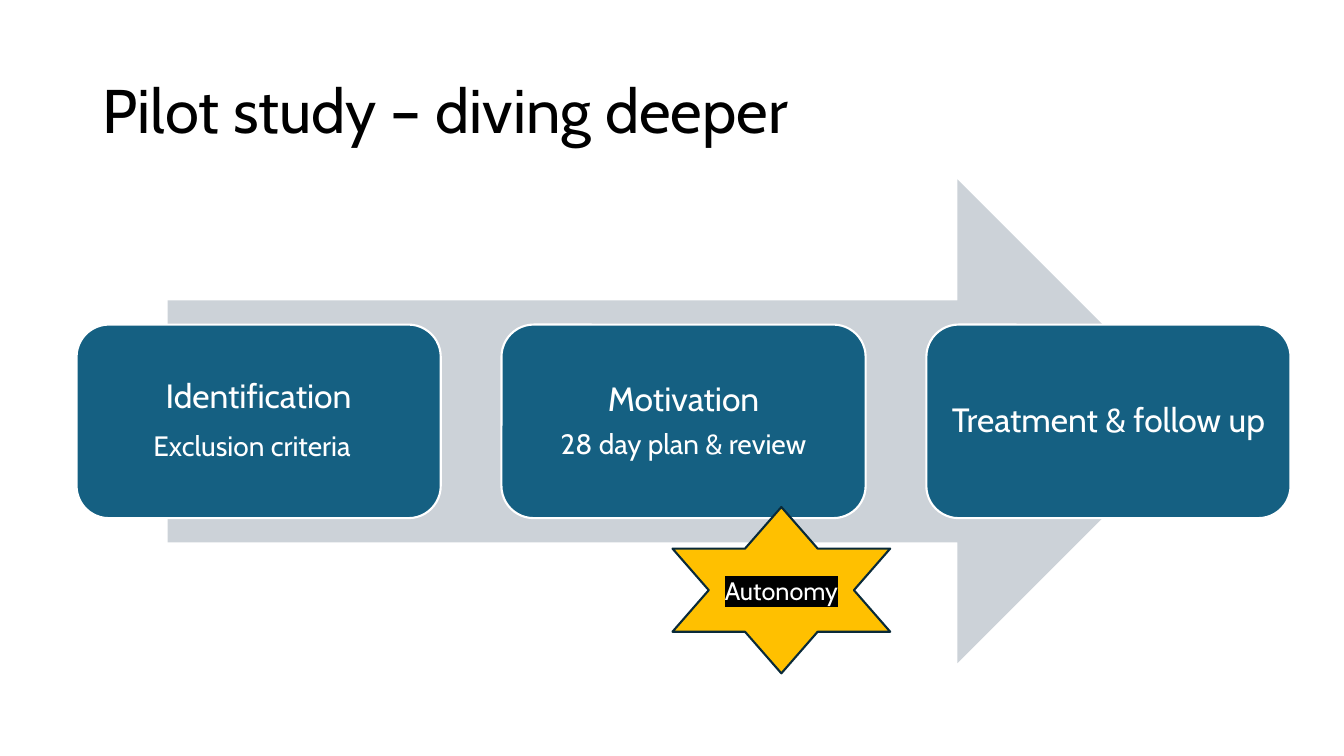
import pptx
import pptx.dml.color
import pptx.enum.shapes
import pptx.enum.text
import pptx.oxml
import pptx.oxml.ns
import pptx.util
from pptx.util import Inches

FONT = "Cabin"
COLORS = {
    "black": "000000",
    "white": "FFFFFF",
    "arrow": "CCD2D8",
    "step": "156082",
    "star": "FFC000",
    "star_line": "092A39",
}
STEPS = [
    ("Identification", "Exclusion criteria"),
    ("Motivation", "28 day plan & review"),
    ("Treatment & follow up",),
]
SHAPES = pptx.enum.shapes.MSO_SHAPE
CENTER = pptx.enum.text.PP_ALIGN.CENTER
MIDDLE = pptx.enum.text.MSO_ANCHOR.MIDDLE


def rgb(name):
    return pptx.dml.color.RGBColor.from_string(COLORS[name])


def format_paragraph(paragraph, size, color, alignment):
    paragraph.alignment = alignment
    for run in paragraph.runs:
        run.font.size = pptx.util.Pt(size)
        run.font.color.rgb = rgb(color)
        run.font.name = FONT


def add_filled_shape(slide, kind, box, fill, line=None):
    shape = slide.shapes.add_shape(kind, *(Inches(length) for length in box))
    shape.shadow.inherit = False
    shape.fill.solid()
    shape.fill.fore_color.rgb = rgb(fill)
    if line:
        shape.line.color.rgb = rgb(line)
        shape.line.width = pptx.util.Pt(1.5)
    else:
        shape.line.fill.background()
    shape.text_frame.word_wrap = True
    shape.text_frame.vertical_anchor = MIDDLE
    return shape


def fill_title(slide, box):
    title = slide.shapes.title
    title.left, title.top, title.width, title.height = (Inches(length) for length in box)
    title.text_frame.text = "Pilot study – diving deeper"
    title.text_frame.vertical_anchor = MIDDLE
    paragraph = title.text_frame.paragraphs[0]
    paragraph.line_spacing = 0.9
    format_paragraph(paragraph, 44, "black", pptx.enum.text.PP_ALIGN.LEFT)


def add_step(slide, box, lines):
    step = add_filled_shape(slide, SHAPES.ROUNDED_RECTANGLE, box, "step", "white")
    frame = step.text_frame
    frame.margin_left = frame.margin_right = Inches(0.1)
    frame.margin_top = frame.margin_bottom = Inches(0.1)
    frame.text = "\n".join(lines)
    for paragraph, size in zip(frame.paragraphs, (24, 20)):
        paragraph.line_spacing = 0.9
        format_paragraph(paragraph, size, "white", CENTER)
    if len(lines) > 1:
        frame.paragraphs[0].space_after = pptx.util.Pt(8.4)
    return step


def add_process(slide, box):
    left, top, width, height = box
    arrow_width = width * 0.85
    arrow_left = left + (width - arrow_width) / 2
    add_filled_shape(slide, SHAPES.RIGHT_ARROW, (arrow_left, top, arrow_width, height), "arrow")
    step_width, step_height = width * 0.3, height * 0.4
    pitch = (width - step_width) / (len(STEPS) - 1)
    step_top = top + (height - step_height) / 2
    steps = [
        add_step(slide, (left + index * pitch, step_top, step_width, step_height), lines)
        for index, lines in enumerate(STEPS)
    ]
    heading, criteria = steps[0].text_frame.paragraphs
    heading.space_after = pptx.util.Pt(12)
    criteria._p.get_or_add_pPr().set("marR", str(Inches(0.13)))


def add_autonomy_star(slide, box):
    star = add_filled_shape(slide, SHAPES.STAR_6_POINT, box, "star", "star_line")
    star.text_frame.text = "Autonomy"
    paragraph = star.text_frame.paragraphs[0]
    format_paragraph(paragraph, 18, "white", CENTER)
    highlight = pptx.oxml.parse_xml(
        f'<a:highlight {pptx.oxml.ns.nsdecls("a")}>'
        f'<a:srgbClr val="{COLORS["black"]}"/></a:highlight>'
    )
    properties = paragraph.runs[0]._r.get_or_add_rPr()
    properties.find(pptx.oxml.ns.qn("a:solidFill")).addnext(highlight)


def main():
    presentation = pptx.Presentation()
    presentation.slide_width = Inches(13.33)
    presentation.slide_height = Inches(7.5)
    slide = presentation.slides.add_slide(presentation.slide_layouts[5])
    fill_title(slide, (0.92, 0.4, 11.5, 1.45))
    add_process(slide, (0.76, 1.78, 12.04, 4.8))
    add_autonomy_star(slide, (6.67, 5.03, 2.16, 1.65))
    presentation.save("out.pptx")


if __name__ == "__main__":
    main()
